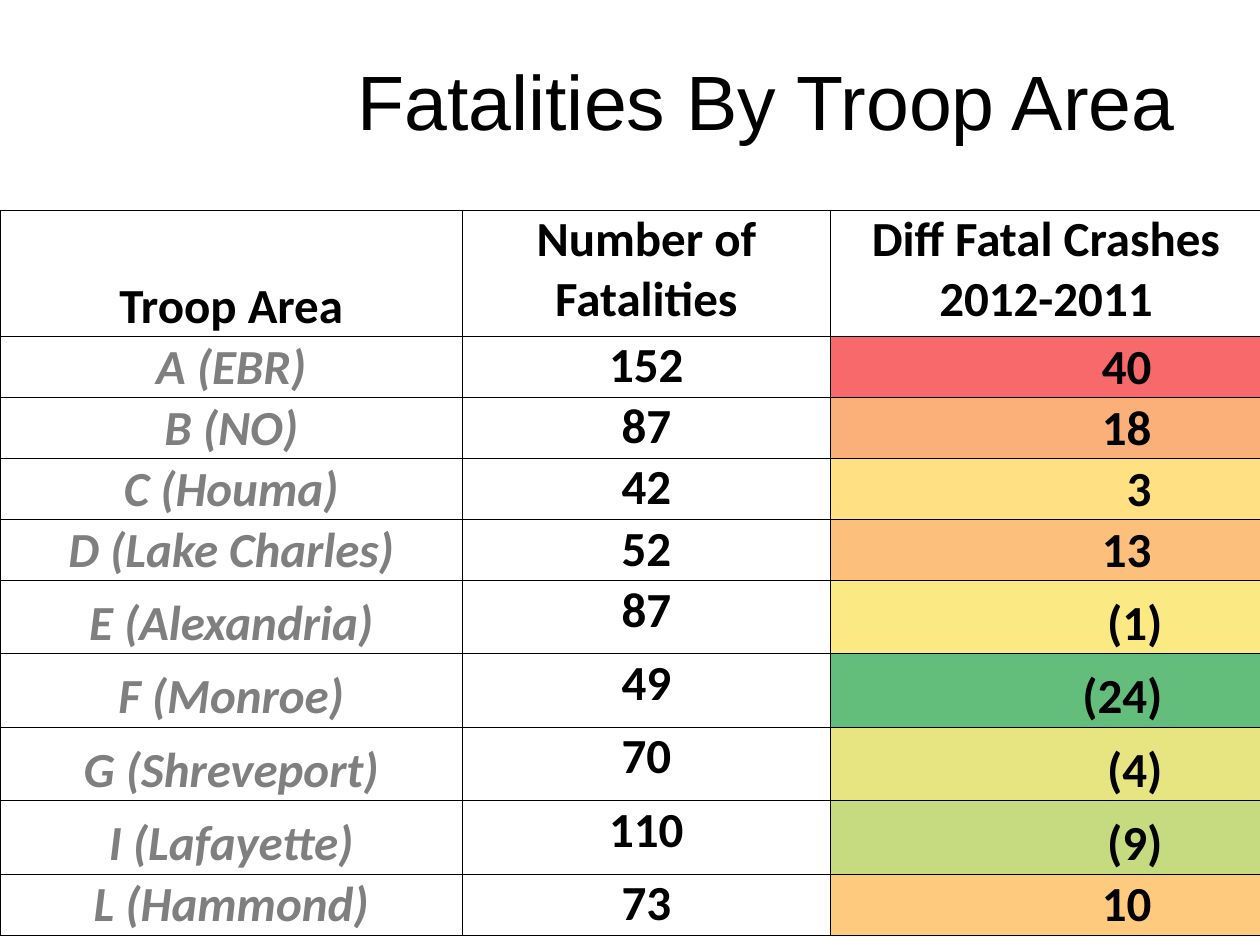
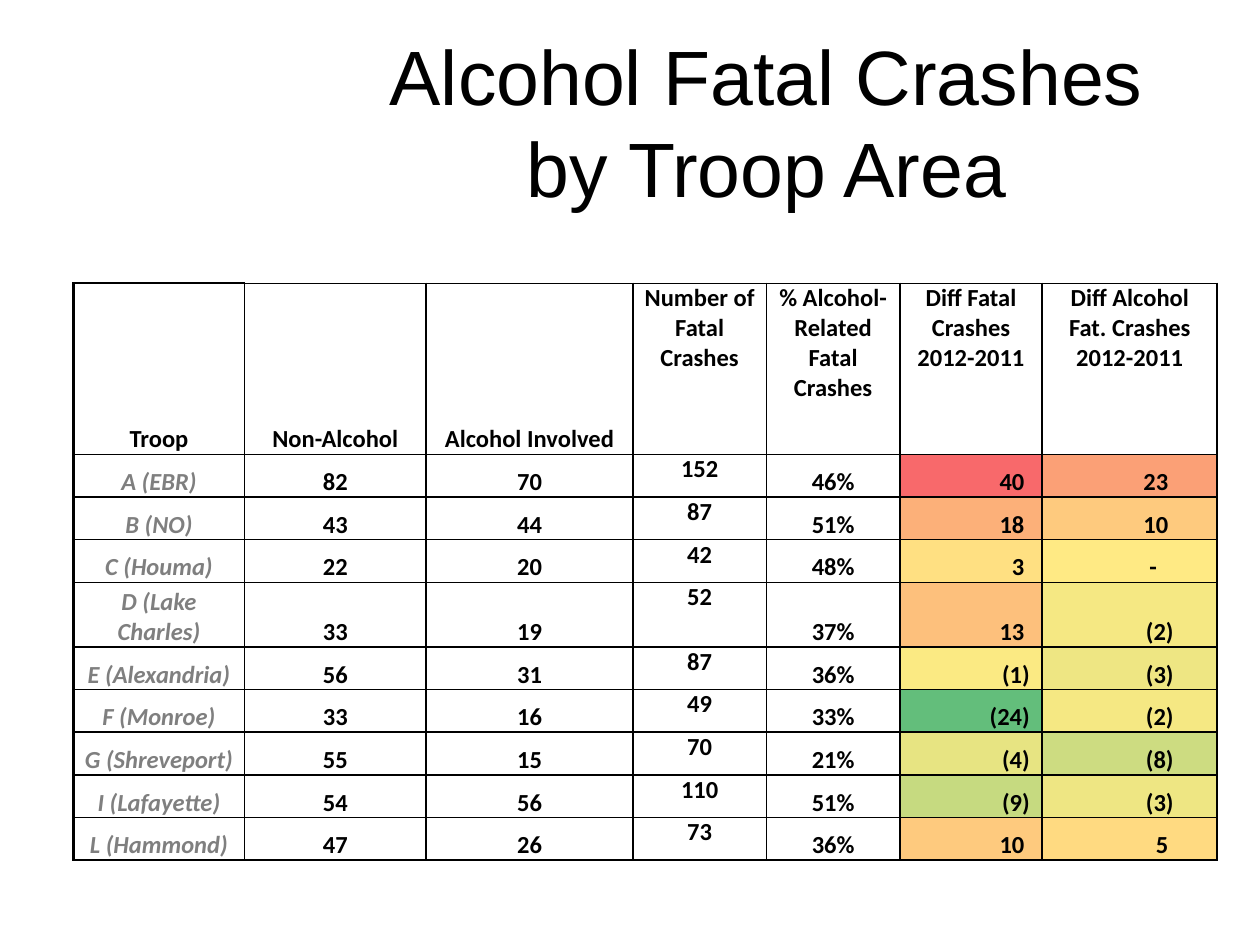
"""Build two slides of crash tables by troop area."""
from pptx import Presentation
from pptx.dml import color
from pptx.enum import text
from pptx.oxml import parse_xml
from pptx.oxml import ns
from pptx.util import Cm, Pt

BLACK, GREY, WHITE = "000000", "7F7F7F", "FFFFFF"
HEAT = {
    "40": "F8696B", "23": "FBA076", "18": "FCB079", "13": "FDC07C",
    "10": "FECA7E", "5": "FFDA81", "3": "FFE082", "-": "FFEA84",
    "(1)": "FBEA83", "(2)": "F5E883", "(3)": "EEE683", "(4)": "E7E482",
    "(8)": "CDDC81", "(9)": "C6DA80", "(24)": "63BE7B",
}
TROOPS = [
    ("A (EBR)", "82", "70", "152", "46%", "40", "23"),
    ("B (NO)", "43", "44", "87", "51%", "18", "10"),
    ("C (Houma)", "22", "20", "42", "48%", "3", "-"),
    ("D (Lake Charles)", "33", "19", "52", "37%", "13", "(2)"),
    ("E (Alexandria)", "56", "31", "87", "36%", "(1)", "(3)"),
    ("F (Monroe)", "33", "16", "49", "33%", "(24)", "(2)"),
    ("G (Shreveport)", "55", "15", "70", "21%", "(4)", "(8)"),
    ("I (Lafayette)", "54", "56", "110", "51%", "(9)", "(3)"),
    ("L (Hammond)", "47", "26", "73", "36%", "10", "5"),
]
SLIDES = [
    dict(
        title="Fatalities By Troop Area", title_top=0.43,
        left=0, top=4.24, size=28, inset=0.03, line=0.5, edge=0.5,
        cols=[9.32, 7.42, 8.69], rows=[2.54] + [1.23] * 4 + [1.48] * 4 + [1.23],
        header=["Troop Area", "Number of Fatalities", "Diff Fatal Crashes\n2012-2011"],
        body=[(t[0], t[3], t[5]) for t in TROOPS],
        total_col=1, diff_insets={2: 2.0},
    ),
    dict(
        title="Alcohol Fatal Crashes by Troop Area", title_top=0.85,
        left=1.48, top=5.71, size=14, inset=0.17, line=1, edge=1.5,
        cols=[3.45, 3.66, 4.17, 2.69, 2.69, 2.87, 3.53],
        rows=[3.45] + [0.86] * 3 + [1.3] + [0.86] * 5,
        header=["Troop", "Non-Alcohol", "Alcohol Involved", "Number of Fatal Crashes",
                "% Alcohol-Related Fatal Crashes", "Diff Fatal Crashes\n2012-2011",
                "Diff Alcohol Fat. Crashes 2012-2011"],
        body=TROOPS, total_col=3, diff_insets={5: 0.25, 6: 0.88},
    ),
]


def rgb(value):
    return color.RGBColor.from_string(value)


def write(tf, words, size=14, font="Calibri", fill=BLACK, bold=False, italic=False,
          align=text.PP_ALIGN.CENTER):
    tf.word_wrap = True
    for i, line in enumerate(words.split("\n")):
        p = tf.add_paragraph() if i else tf.paragraphs[0]
        p.alignment = align
        r = p.add_run()
        r.text = line
        r.font.size, r.font.name = Pt(size), font
        r.font.bold, r.font.italic = bold, italic
        r.font.color.rgb = rgb(fill)


prs = Presentation()
prs.slide_width, prs.slide_height = Cm(25.4), Cm(19.05)

for d in SLIDES:
    s = prs.slides.add_slide(prs.slide_layouts[6])
    tf = s.shapes.add_textbox(Cm(6.78), Cm(d["title_top"]), Cm(17.35), Cm(3.18)).text_frame
    tf.vertical_anchor = text.MSO_ANCHOR.MIDDLE
    write(tf, d["title"], size=44, font="Arial")

    grid = [d["header"], *d["body"]]
    last_row, last_col = len(grid) - 1, len(d["cols"]) - 1
    tbl = s.shapes.add_table(len(grid), len(d["cols"]), Cm(d["left"]), Cm(d["top"]),
                             Cm(sum(d["cols"])), Cm(sum(d["rows"]))).table
    tbl.first_row = tbl.horz_banding = False
    for column, width in zip(tbl.columns, d["cols"]):
        column.width = Cm(width)
    for row, height in zip(tbl.rows, d["rows"]):
        row.height = Cm(height)

    for i, values in enumerate(grid):
        for j, value in enumerate(values):
            cell = tbl.cell(i, j)
            is_diff = i > 0 and j in d["diff_insets"]
            is_name = i > 0 and j == 0
            on_top = j == d["total_col"] or (i == 0 and j > d["total_col"])
            cell.vertical_anchor = text.MSO_ANCHOR.TOP if on_top else text.MSO_ANCHOR.BOTTOM
            cell.margin_left = cell.margin_right = Cm(d["inset"])
            cell.margin_top = cell.margin_bottom = 0
            if is_diff:
                spaces = 0 if value.endswith(")") else 3 if value == "-" else 1
                cell.margin_right = Cm(round(d["diff_insets"][j] + spaces * 0.008 * d["size"], 2))

            heavy = {"L": j == 0, "R": j == last_col, "T": i == j == 0, "B": i == last_row}
            for side, is_edge in heavy.items():
                width = Pt(d["edge"] if is_edge else d["line"])
                cell._tc.get_or_add_tcPr().append(parse_xml(
                    f'<a:ln{side} {ns.nsdecls("a")} w="{width}"><a:solidFill>'
                    f'<a:srgbClr val="{BLACK}"/></a:solidFill></a:ln{side}>'))
            cell.fill.solid()
            cell.fill.fore_color.rgb = rgb(HEAT[value] if is_diff else WHITE)
            write(cell.text_frame, value, size=d["size"], bold=True, italic=is_name,
                  fill=GREY if is_name else BLACK,
                  align=text.PP_ALIGN.RIGHT if is_diff else text.PP_ALIGN.CENTER)

prs.save("out.pptx")
